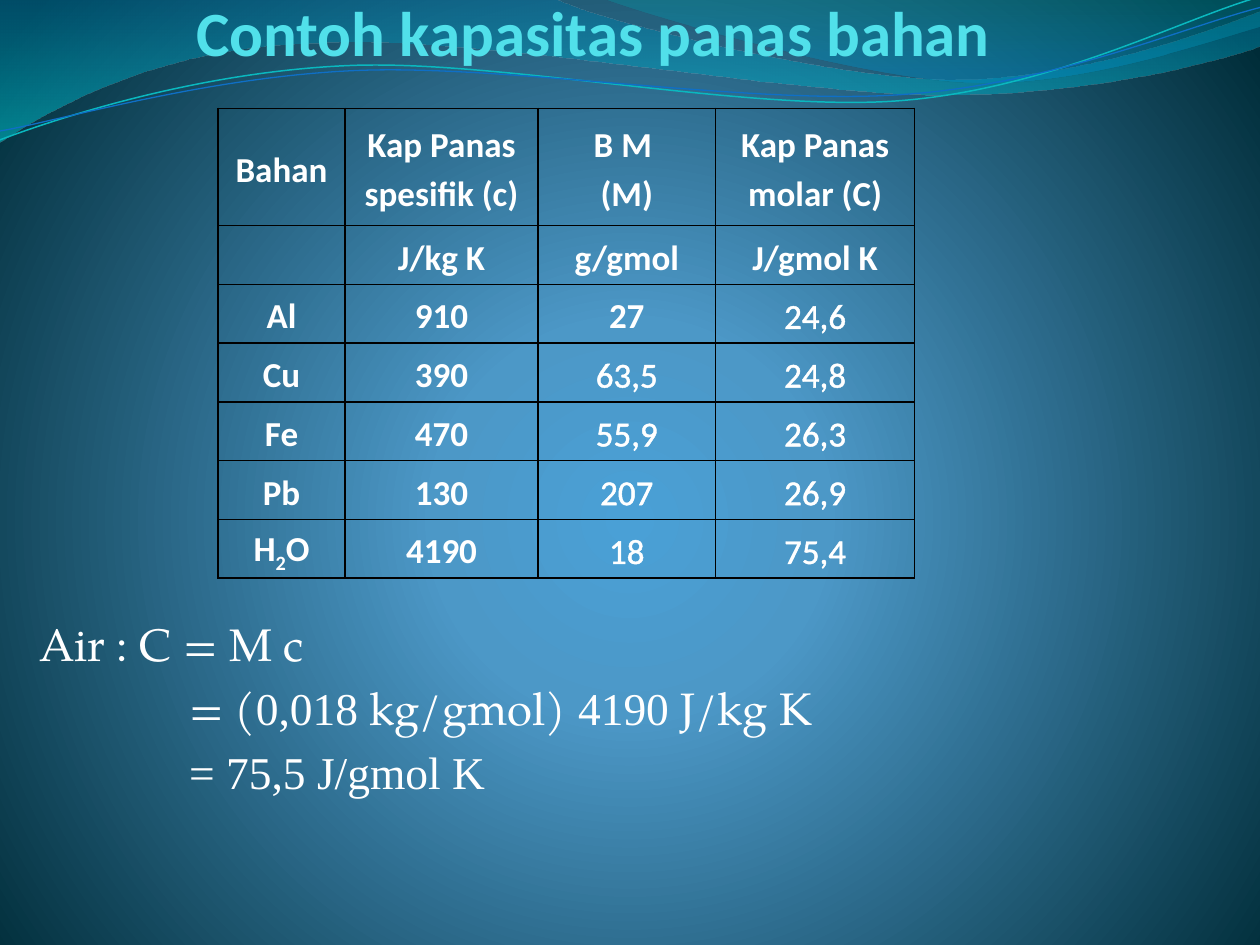
import math

from pptx import Presentation
from pptx.dml.color import RGBColor
from pptx.enum.text import MSO_ANCHOR, MSO_AUTO_SIZE, PP_ALIGN
from pptx.oxml import parse_xml
from pptx.oxml.ns import nsdecls, qn
from pptx.util import Inches, Pt

CENTER, LEFT = PP_ALIGN.CENTER, PP_ALIGN.LEFT
MIDDLE, TOP, BOTTOM = MSO_ANCHOR.MIDDLE, MSO_ANCHOR.TOP, MSO_ANCHOR.BOTTOM

THEME = {
    "title": "51E0EA", "text": "FFFFFF", "border": "000000",
    "sans": "Calibri", "serif": "TeX Gyre Pagella", "number": "Times New Roman",
    "title_size": 36, "body_size": 26, "table_size": 20,
    "background": [(0, "4AA0D6", 100), (25, "4C98C7", 100), (100, "002C38", 100)],
}
TITLE = "Contoh kapasitas panas bahan"
SERIF, NUMBER = THEME["serif"], THEME["number"]
FORMULA = [
    (0, [("Air : C = M c", SERIF)]),
    (1.19, [("= (", SERIF), ("0,018 ", NUMBER), ("kg/gmol) ", SERIF),
            ("4190 ", NUMBER), ("J/kg K", SERIF)]),
    (1.19, [("= 75,5 J/gmol K", NUMBER)]),
]
ROWS = [
    ["Bahan", "Kap Panas\nspesifik (c)", "B M \n(M)", "Kap Panas\nmolar (C)"],
    ["", "J/kg K", "g/gmol", "J/gmol K"],
    ["Al", "910", "27", "24,6"],
    ["Cu", "390", "63,5", "24,8"],
    ["Fe", "470", "55,9", "26,3"],
    ["Pb", "130", "207", "26,9"],
    ["H_2_O", "4190", "18", "75,4"],
]
COLUMN_WIDTHS = [1.01, 1.53, 1.41, 1.58]
TABLE_HEIGHT, HEADER_HEIGHT = 3.73, 0.93

BANDS = [
    ([(0, 0), (4.4, -0.01), (4.76, 0.17, 6.64, 0.63, 7.58, 0.63),
      (8.53, 0.63, 9.58, 0.26, 10, 0.09), (10.01, 0.36),
      (9.83, 0.44, 8.7, 0.76, 7.46, 0.75), (6.22, 0.75, 3.82, 0.28, 2.57, 0.34),
      (1.29, 0.36, 0.46, 0.83, -0.01, 1.13), (0, 0)],
     [(0, "0074A1", 45), (100, "00C6CF", 55)]),
    ([(4.79, -0.01), (5.09, 0.11, 6.82, 0.62, 7.69, 0.65),
      (8.56, 0.69, 9.61, 0.32, 10, 0.21), (10, 0), (4.79, -0.01)],
     [(0, "00A1A9", 30), (80, "008BBF", 45)]),
]
STRANDS = [
    ([(0, 1.11), (0.48, 0.93, 1.58, 0.57, 2.77, 0.52),
      (3.95, 0.47, 5.93, 0.89, 7.13, 0.8), (8.33, 0.71, 9.38, 0.15, 9.98, -0.02)],
     (4.99, 0.57), "0AB8BF", 0.85),
    ([(0, 1.04), (0.47, 0.96, 1.64, 0.61, 2.83, 0.56),
      (4.03, 0.51, 5.97, 0.84, 7.17, 0.75), (8.36, 0.67, 9.41, 0.21, 10, 0.06)],
     (5, 0.59), "0F6FC6", 0.75),
]
STRAND_TILT = -2.7
LINEAR = '<a:lin ang="5400000" scaled="0"/>'
RADIAL = ('<a:path path="circle"><a:fillToRect l="10000" t="110000" '
          'r="10000" b="100000"/></a:path>')


def set_gradient(fill, holder, stops, direction):
    fill.gradient()
    stop_xml = "".join(
        f'<a:gs pos="{position * 1000}"><a:srgbClr val="{color}">'
        f'<a:alpha val="{alpha * 1000}"/></a:srgbClr></a:gs>'
        for position, color, alpha in stops)
    gradient = next(holder.iter(qn("a:gradFill")))
    gradient.getparent().replace(gradient, parse_xml(
        f'<a:gradFill {nsdecls("a")} rotWithShape="1"><a:gsLst>{stop_xml}</a:gsLst>'
        f'{direction}</a:gradFill>'))


def turn(point, pivot, degrees):
    angle = math.radians(degrees)
    x, y = point[0] - pivot[0], point[1] - pivot[1]
    return (pivot[0] + x * math.cos(angle) - y * math.sin(angle),
            pivot[1] + x * math.sin(angle) + y * math.cos(angle))


def add_wave(slide, segments, close, pivot=(0, 0), tilt=0):
    points = [turn(segment[index:index + 2], pivot, -tilt)
              for segment in segments for index in range(0, len(segment), 2)]
    points = [(Inches(x), Inches(y)) for x, y in points]
    builder = slide.shapes.build_freeform(*points[0])
    builder.add_line_segments(points[1:], close=close)
    shape = builder.convert_to_shape()
    shape.shadow.inherit = False
    shape.rotation = tilt
    lines = iter(list(shape.element.iter(qn("a:lnTo"))))
    for segment in segments[1:]:
        first = next(lines)
        if len(segment) == 6:
            curve = parse_xml(f'<a:cubicBezTo {nsdecls("a")}/>')
            first.addprevious(curve)
            for line in (first, next(lines), next(lines)):
                curve.append(line[0])
                line.getparent().remove(line)
    return shape


def format_run(run, size, font, color, bold=False):
    run.font.size = Pt(size)
    run.font.name = font
    run.font.bold = bold
    run.font.color.rgb = RGBColor.from_string(color)


def line_xml(tag, color, width):
    return parse_xml(
        f'<a:{tag} {nsdecls("a")} w="{Pt(width)}"><a:solidFill>'
        f'<a:srgbClr val="{color}"/></a:solidFill></a:{tag}>')


def place_text(shape, box, anchor, vertical_margin):
    shape.left, shape.top, shape.width, shape.height = map(Inches, box)
    frame = shape.text_frame
    frame.word_wrap = True
    frame.auto_size = MSO_AUTO_SIZE.NONE
    frame.vertical_anchor = anchor
    frame.margin_left, frame.margin_right = 0, Inches(0.02)
    frame.margin_top = frame.margin_bottom = Inches(vertical_margin)
    return frame


def fill_cell(cell, text, bold):
    cell.fill.background()
    cell.vertical_anchor = MIDDLE
    cell.margin_left = cell.margin_right = Inches(0.07)
    cell.margin_top = cell.margin_bottom = 0
    properties = cell._tc.get_or_add_tcPr()
    for index, side in enumerate(("lnL", "lnR", "lnT", "lnB")):
        properties.insert(index, line_xml(side, THEME["border"], 1))
    first_part, *other_parts = text.split("_")
    cell.text_frame.text = first_part
    for part in other_parts:
        cell.text_frame.paragraphs[0].add_run().text = part
    for paragraph in cell.text_frame.paragraphs:
        paragraph.alignment = CENTER
        paragraph.line_spacing = 1.15
        for index, run in enumerate(paragraph.runs):
            format_run(run, THEME["table_size"], THEME["sans"], THEME["text"], bold)
            run_properties = run._r.get_or_add_rPr()
            if index % 2:
                run_properties.set("baseline", "-25000")
            if not bold:
                run_properties.insert(0, line_xml("ln", THEME["text"], 0.75))


def add_heat_table(slide):
    row_height = (TABLE_HEIGHT - HEADER_HEIGHT) / (len(ROWS) - 1)
    table = slide.shapes.add_table(
        len(ROWS), len(COLUMN_WIDTHS), Inches(1.73), Inches(0.86),
        Inches(sum(COLUMN_WIDTHS)), Inches(TABLE_HEIGHT)).table
    table.first_row = table.horz_banding = False
    for column, width in zip(table.columns, COLUMN_WIDTHS):
        column.width = Inches(width)
    for row_index, values in enumerate(ROWS):
        table.rows[row_index].height = Inches(row_height if row_index else HEADER_HEIGHT)
        for column_index, text in enumerate(values):
            regular = row_index >= 2 and column_index >= 2 and text != "27"
            fill_cell(table.cell(row_index, column_index), text, not regular)


def main():
    presentation = Presentation()
    presentation.slide_width, presentation.slide_height = Inches(10), Inches(7.5)
    slide = presentation.slides.add_slide(presentation.slide_layouts[0])
    set_gradient(slide.background.fill, slide.element, THEME["background"], RADIAL)

    for segments, stops in BANDS:
        band = add_wave(slide, segments, True)
        band.line.fill.background()
        set_gradient(band.fill, band.element, stops, LINEAR)
    for segments, pivot, color, width in STRANDS:
        strand = add_wave(slide, segments, False, pivot, STRAND_TILT)
        strand.fill.background()
        strand.line.color.rgb = RGBColor.from_string(color)
        strand.line.width = Pt(width)

    title, formula = slide.placeholders
    for placeholder in (title, formula):
        placeholder.element.getparent().append(placeholder.element)

    frame = place_text(title, (0.47, 0, 8.5, 0.55), BOTTOM, 0)
    frame.text = TITLE
    frame.paragraphs[0].alignment = CENTER
    format_run(frame.paragraphs[0].runs[0], THEME["title_size"], THEME["sans"],
               THEME["title"], True)

    frame = place_text(formula, (0.31, 4.84, 9.69, 2.19), TOP, 0.05)
    for index, (indent, parts) in enumerate(FORMULA):
        paragraph = frame.add_paragraph() if index else frame.paragraphs[0]
        paragraph.alignment = LEFT
        paragraph.space_before = Pt(5.4)
        paragraph._p.get_or_add_pPr().set("marL", str(Inches(indent)))
        for text, font in parts:
            run = paragraph.add_run()
            run.text = text
            format_run(run, THEME["body_size"], font, THEME["text"])

    add_heat_table(slide)
    presentation.save("out.pptx")


if __name__ == "__main__":
    main()
